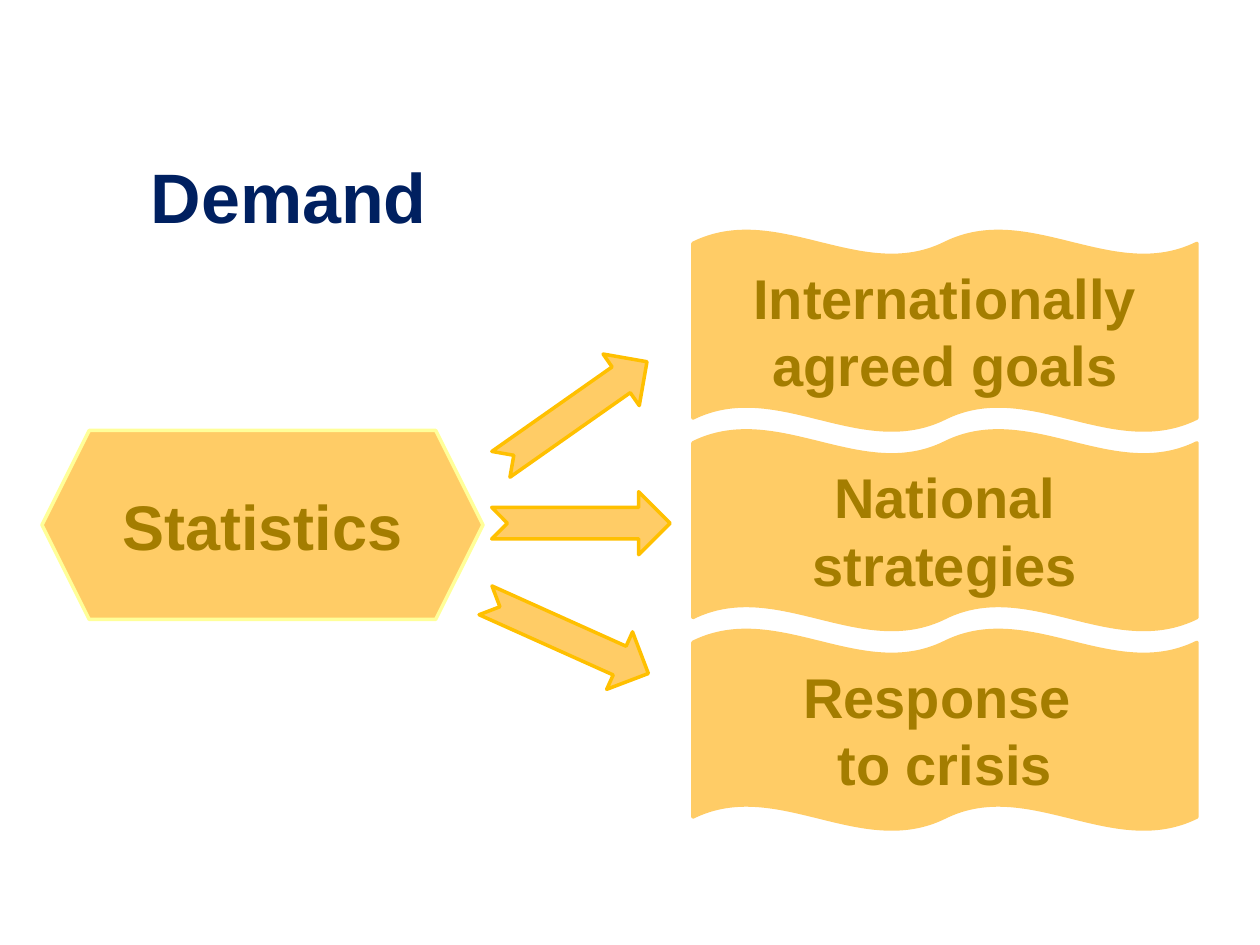
from pptx import Presentation
from pptx.dml.color import RGBColor
from pptx.enum.shapes import MSO_SHAPE as SHAPE
from pptx.enum.text import MSO_ANCHOR as ANCHOR, MSO_AUTO_SIZE as AUTO, PP_ALIGN as ALIGN
from pptx.util import Pt

NAVY = RGBColor(0x00, 0x20, 0x60)
ORANGE = RGBColor(0xFF, 0xCC, 0x66)
YELLOW = RGBColor(0xFF, 0xFF, 0x99)
GOLD = RGBColor(0xFF, 0xC0, 0x00)
BROWN = RGBColor(0xA4, 0x7D, 0x00)


class Deck:
    font = "Arial"
    line_width = 2

    def __init__(self, width, height):
        self.prs = Presentation()
        self.prs.slide_width, self.prs.slide_height = Pt(width), Pt(height)

    def add_slide(self):
        self.s = self.prs.slides.add_slide(self.prs.slide_layouts[5])

    def set_text(self, sp, text, size, color, anchor):
        tf = sp.text_frame
        tf.text = text
        tf.word_wrap = True
        tf.vertical_anchor = anchor
        for p in tf.paragraphs:
            p.alignment = ALIGN.CENTER
            for r in p.runs:
                r.font.name, r.font.size = self.font, Pt(size)
                r.font.bold = True
                r.font.color.rgb = color

    def title(self, text, left, top, width, height):
        sp = self.s.shapes.title
        sp.left, sp.top, sp.width, sp.height = map(Pt, (left, top, width, height))
        self.set_text(sp, text, 40, NAVY, ANCHOR.TOP)
        sp.text_frame.auto_size = AUTO.SHAPE_TO_FIT_TEXT

    def shape(self, kind, left, top, width, height, line):
        sp = self.s.shapes.add_shape(kind, *map(Pt, (left, top, width, height)))
        sp.shadow.inherit = False
        sp.fill.solid()
        sp.fill.fore_color.rgb = ORANGE
        sp.line.color.rgb = line
        sp.line.width = Pt(self.line_width)
        return sp

    def label(self, kind, text, size, left, top, width, height, line):
        sp = self.shape(kind, left, top, width, height, line)
        self.set_text(sp, text, size, BROWN, ANCHOR.MIDDLE)

    def arrow(self, left, top, rotation):
        sp = self.shape(SHAPE.NOTCHED_RIGHT_ARROW, left, top, 102, 36, GOLD)
        sp.rotation = rotation


def main():
    deck = Deck(720, 540)
    deck.add_slide()
    deck.title("Demand", 12, 84, 306, 55.5)

    # Source of the supply
    deck.label(SHAPE.HEXAGON, "Statistics", 36, 24, 246, 252, 108, YELLOW)

    # Stacked demands
    demands = ["Internationally agreed goals", "National strategies",
               "Response \vto crisis"]
    height = 114
    for i, text in enumerate(demands):
        deck.label(SHAPE.DOUBLE_WAVE, text, 32, 396, 132 + i * height,
                   288, height, ORANGE)

    # Arrows fanning out to the demands
    for left, top, rotation in [(277, 218, 324.9), (281, 281, 0), (273, 346, 24.2)]:
        deck.arrow(left, top, rotation)

    deck.prs.save("out.pptx")


if __name__ == "__main__":
    main()
